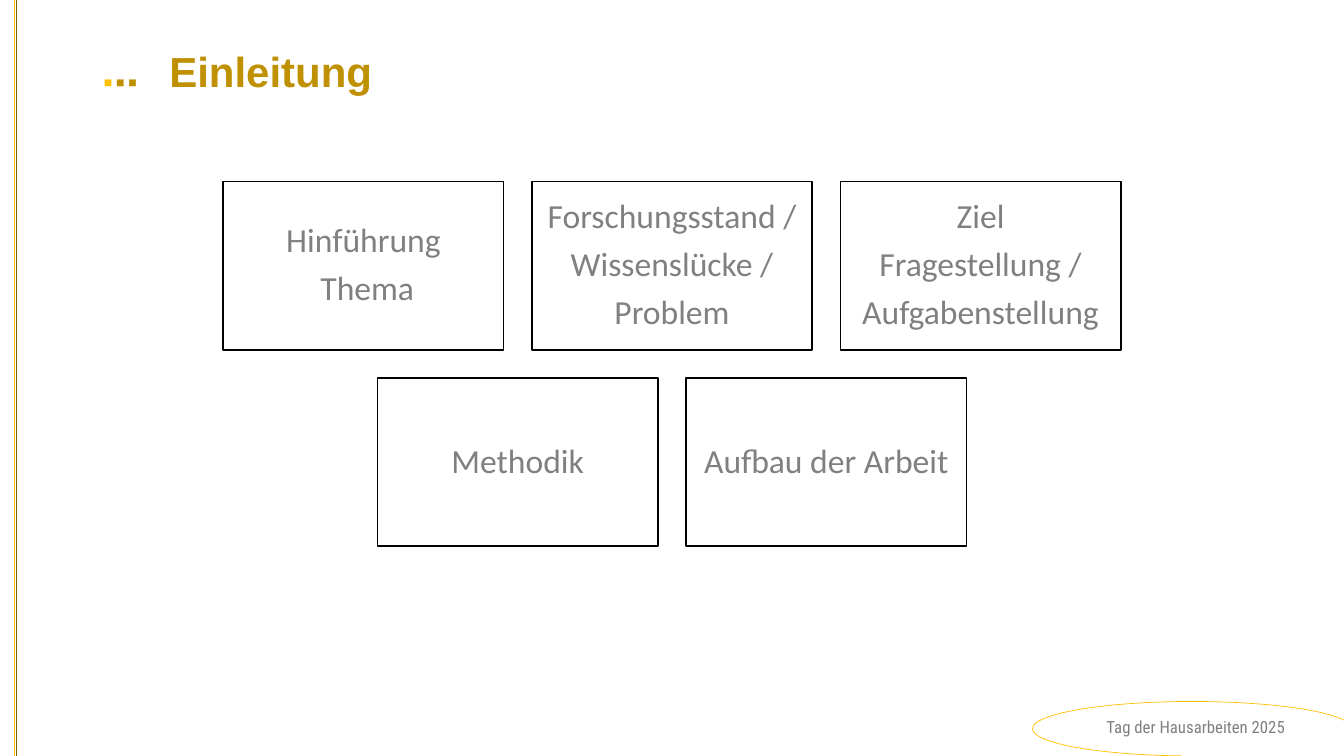
from dataclasses import dataclass

from lxml import etree
from pptx import Presentation
from pptx.dml.color import RGBColor
from pptx.enum.shapes import MSO_CONNECTOR as CONN, MSO_SHAPE as SHAPE
from pptx.enum.text import MSO_ANCHOR as ANCHOR, MSO_AUTO_SIZE as AUTO, PP_ALIGN as ALIGN
from pptx.oxml.ns import qn
from pptx.util import Inches, Pt


@dataclass(frozen=True)
class Theme:
    gold: RGBColor = RGBColor(0xFF, 0xC0, 0x00)
    dark_gold: RGBColor = RGBColor(0xBF, 0x90, 0x00)
    brown: RGBColor = RGBColor(0x80, 0x60, 0x00)
    gray: RGBColor = RGBColor(0x80, 0x80, 0x80)
    black: RGBColor = RGBColor(0, 0, 0)
    title_font: str = "Arial"
    box_font: str = "Calibri"
    footer_font: str = "Roboto Condensed"
    title_size: int = 30
    marker_size: int = 10
    box_size: int = 24
    footer_size: int = 12


T = Theme()


def style(r, font, size, color, bold=False):
    r.font.name, r.font.size, r.font.bold = font, Pt(size), bold
    r.font.color.rgb = color


prs = Presentation()
prs.slide_width, prs.slide_height = Inches(13.33), Inches(7.5)
s = prs.slides.add_slide(prs.slide_layouts[5])

# Footer
footer = s.shapes.add_textbox(Inches(10.72), Inches(6.92), Inches(2.28), Inches(0.58))
tf = footer.text_frame
tf.word_wrap = True
tf.vertical_anchor = ANCHOR.MIDDLE
p = tf.paragraphs[0]
p.text = "Tag der Hausarbeiten 2025"
p.alignment = ALIGN.CENTER
style(p.runs[0], T.footer_font, T.footer_size, T.gray)

# Arc around the footer
arc = s.shapes.add_shape(SHAPE.ARC, Inches(10.24), Inches(6.96), Inches(3.17), Inches(0.54))
arc.adjustments[0], arc.adjustments[1] = 65.88, 214.11
arc.shadow.inherit = False
arc.fill.background()
arc.line.color.rgb = T.gold
arc.line.width = Pt(0.5)

# Double line at the left edge
for x, color in ((0.14, T.gold), (0.16, T.brown)):
    edge = s.shapes.add_connector(CONN.STRAIGHT, Inches(x), Inches(-0.01), Inches(x), Inches(7.5))
    edge.line.color.rgb = color
    edge.line.width = Pt(0.75)
    etree.SubElement(edge._element.spPr, qn("a:effectLst"))

# Title with three square markers, heading set off by a tab stop
title = s.shapes.title
title.left, title.top = Inches(0.93), Inches(0.4)
title.width, title.height = Inches(12.24), Inches(6.99)
tf = title.text_frame
tf.word_wrap = True
tf.auto_size = AUTO.NONE
tf.vertical_anchor = ANCHOR.TOP
p = tf.paragraphs[0]
p.alignment = ALIGN.LEFT
tabs = etree.SubElement(p._p.get_or_add_pPr(), qn("a:tabLst"))
etree.SubElement(tabs, qn("a:tab"), pos=str(Inches(0.65)), algn="l")
for text, size, color in (
    ("■", T.marker_size, T.gold),
    (" ■ ■", T.marker_size, T.dark_gold),
    ("\tEinleitung", T.title_size, T.dark_gold),
):
    r = p.add_run()
    r.text = text
    style(r, T.title_font, size, color, bold=True)

# Boxes in centred rows
ROWS = (
    ("Hinführung\n Thema", "Forschungsstand /\nWissenslücke /\nProblem",
     "Ziel\nFragestellung /\nAufgabenstellung"),
    ("Methodik", "Aufbau der Arbeit"),
)
BOX_W, BOX_H, GAP, TOP = 2.78, 1.67, 0.28, 1.8
for i, row in enumerate(ROWS):
    left = (13.33 - len(row) * BOX_W - (len(row) - 1) * GAP) / 2
    for j, text in enumerate(row):
        box = s.shapes.add_shape(
            SHAPE.RECTANGLE, Inches(left + j * (BOX_W + GAP)), Inches(TOP + i * (BOX_H + GAP)),
            Inches(BOX_W), Inches(BOX_H))
        box.shadow.inherit = False
        box.fill.background()
        box.line.color.rgb = T.black
        box.line.width = Pt(1.25)
        tf = box.text_frame
        tf.text = text
        tf.word_wrap = True
        tf.vertical_anchor = ANCHOR.MIDDLE
        tf.margin_left = tf.margin_right = tf.margin_top = tf.margin_bottom = Inches(0.1)
        for p in tf.paragraphs:
            p.alignment = ALIGN.CENTER
            p.line_spacing = 0.9
            p.space_after = Pt(0.35 * T.box_size)
            style(p.runs[0], T.box_font, T.box_size, T.gray)

prs.save("out.pptx")
